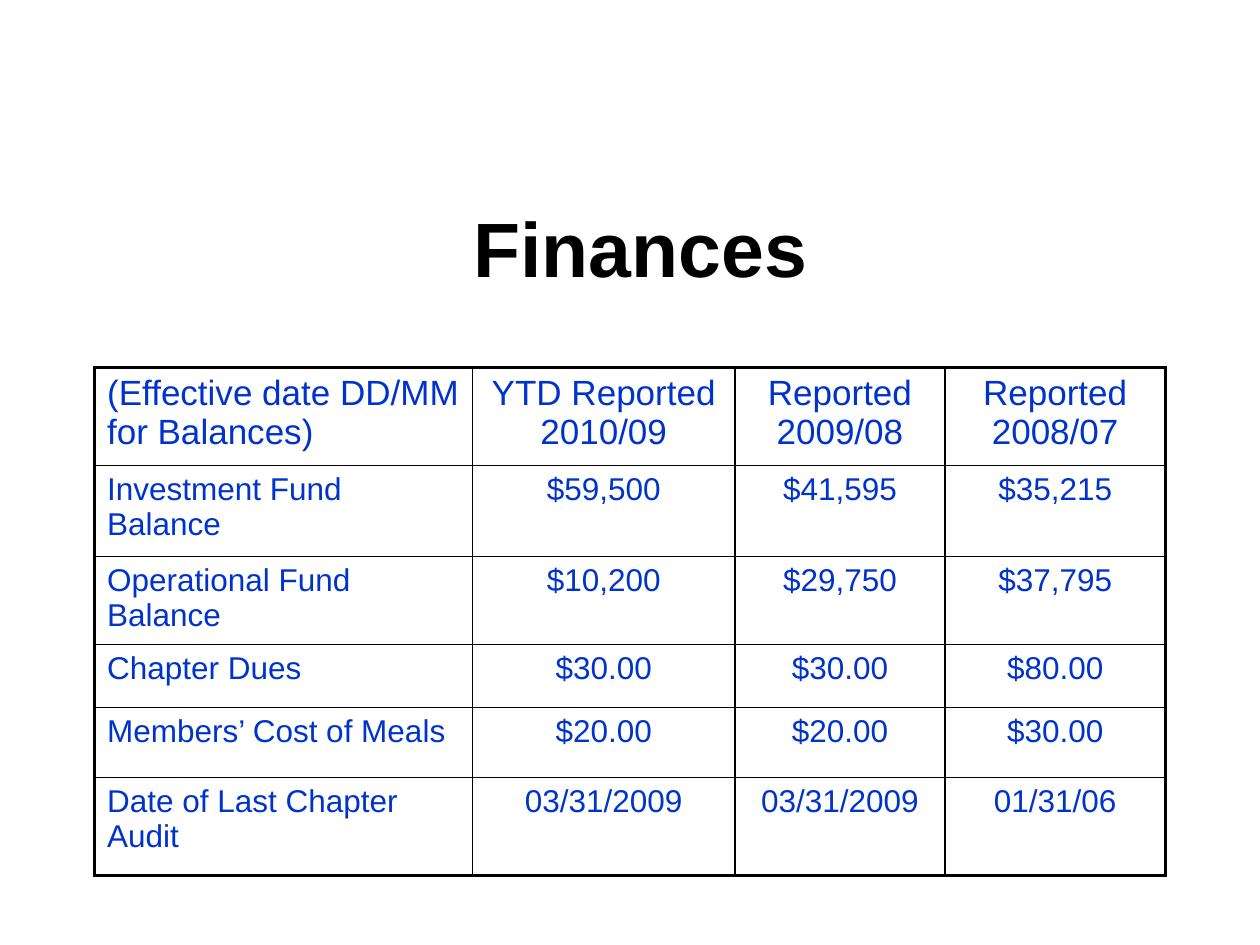
from lxml import etree
from pptx import Presentation
from pptx.dml.color import RGBColor
from pptx.enum import text
from pptx.oxml import ns
from pptx.util import Pt

BLACK = RGBColor(0x00, 0x00, 0x00)
BLUE = RGBColor(0x00, 0x33, 0xCC)
FONT = "Arial"
OUTER_LINE, INNER_LINE = Pt(2.25), Pt(1)

finances = [
    ["(Effective date DD/MM for Balances)", "YTD Reported 2010/09", "Reported 2009/08", "Reported 2008/07"],
    ["Investment Fund Balance", "$59,500", "$41,595", "$35,215"],
    ["Operational Fund Balance", "$10,200", "$29,750", "$37,795"],
    ["Chapter Dues", "$30.00", "$30.00", "$80.00"],
    ["Members’ Cost of Meals", "$20.00", "$20.00", "$30.00"],
    ["Date of Last Chapter Audit", "03/31/2009", "03/31/2009", "01/31/06"],
]
column_widths = [216, 150, 120, 126]
row_heights = [56, 52, 48, 36, 40, 56]
last_row, last_column = len(row_heights) - 1, len(column_widths) - 1


def add_border(cell, side, width):
    """Draw one cell edge; side is L, R, T or B, added in that order."""
    line = etree.SubElement(cell._tc.get_or_add_tcPr(), ns.qn(f"a:ln{side}"), w=str(width))
    fill = etree.SubElement(line, ns.qn("a:solidFill"))
    etree.SubElement(fill, ns.qn("a:srgbClr"), val=str(BLACK))


def style_text(paragraph, size, color, alignment):
    paragraph.alignment = alignment
    paragraph.font.name = FONT
    paragraph.font.size = Pt(size)
    paragraph.font.color.rgb = color


deck = Presentation()
deck.slide_width, deck.slide_height = Pt(720), Pt(540)
slide = deck.slides.add_slide(deck.slide_layouts[6])

title = slide.shapes.add_textbox(Pt(42), Pt(96), Pt(648), Pt(90)).text_frame
title.word_wrap = True
title.vertical_anchor = text.MSO_ANCHOR.MIDDLE
title.text = "Finances"
style_text(title.paragraphs[0], 44, BLACK, text.PP_ALIGN.CENTER)
title.paragraphs[0].font.bold = True

balances = slide.shapes.add_table(
    len(row_heights), len(column_widths),
    Pt(54), Pt(210), Pt(sum(column_widths)), Pt(sum(row_heights)),
).table
balances.first_row = False
balances.horz_banding = False
for column, width in zip(balances.columns, column_widths):
    column.width = Pt(width)
for row, height in zip(balances.rows, row_heights):
    row.height = Pt(height)

for r, entries in enumerate(finances):
    for c, entry in enumerate(entries):
        cell = balances.cell(r, c)
        cell.text = entry
        style_text(
            cell.text_frame.paragraphs[0],
            20 if r == 0 else 18,
            BLUE,
            text.PP_ALIGN.LEFT if c == 0 else text.PP_ALIGN.CENTER,
        )
        on_edge = {"L": c == 0, "R": c == last_column, "T": r == 0, "B": r == last_row}
        for side, outer in on_edge.items():
            add_border(cell, side, OUTER_LINE if outer else INNER_LINE)
        cell.fill.background()

deck.save("out.pptx")
